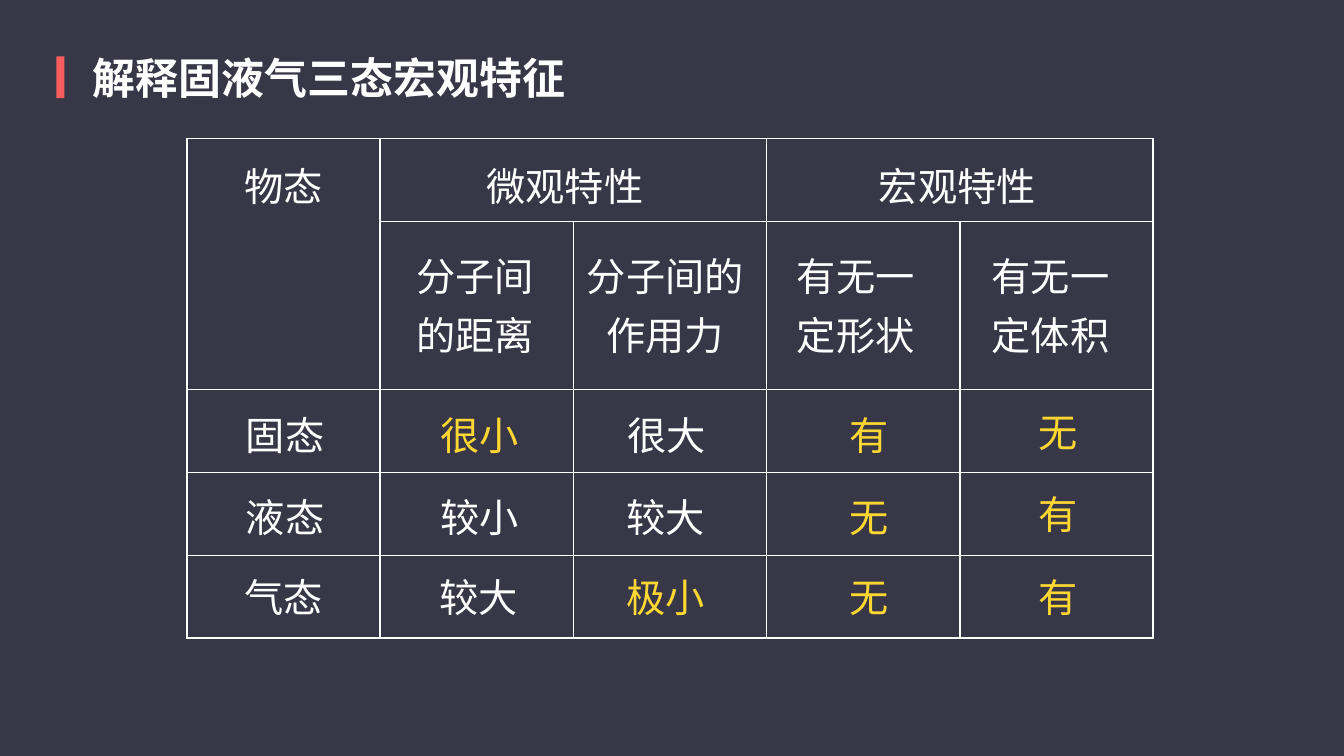
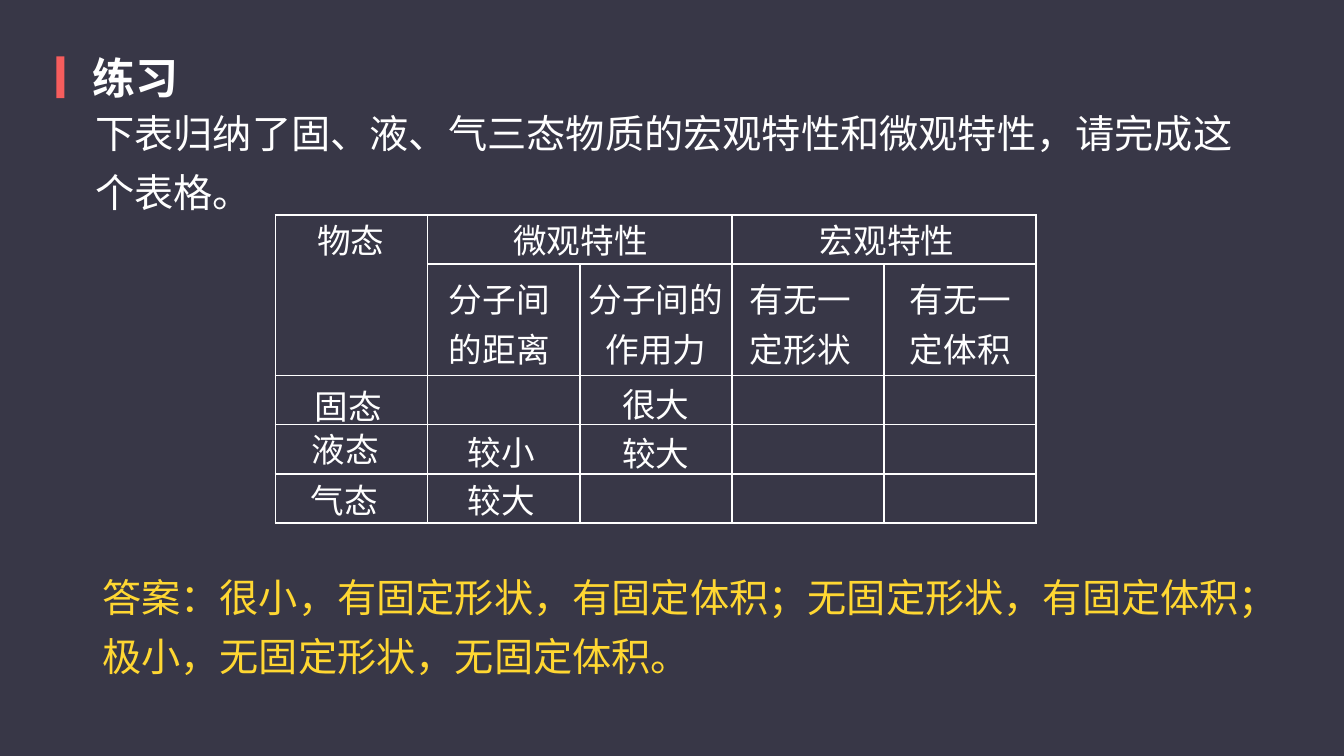
"""Two slides on the states of matter: a summary table and a fill-in exercise."""
from lxml import etree
from pptx import Presentation
from pptx.dml.color import RGBColor
from pptx.enum.shapes import MSO_SHAPE
from pptx.enum.text import MSO_ANCHOR, MSO_AUTO_SIZE, PP_ALIGN
from pptx.oxml.ns import qn
from pptx.util import Inches, Pt

RECTANGLE = MSO_SHAPE.RECTANGLE
TOP = MSO_ANCHOR.TOP
GROW = MSO_AUTO_SIZE.SHAPE_TO_FIT_TEXT
LEFT, CENTER = PP_ALIGN.LEFT, PP_ALIGN.CENTER

COLORS = {"night": "383747", "accent": "F65D5D", "white": "FFFFFF", "answer": "FFD732"}
FONT = "Noto Sans CJK SC"
TITLE_SIZE, BODY_SIZE, EXERCISE_SIZE = 23, 21, 18
TEXT_RIGHT = 9.99

GROUPS = ["物态", "微观特性", "宏观特性"]
PROPERTIES = ["分子间的距离", "分子间的作用力", "有无一定形状", "有无一定体积"]
STATES = [
    ("固态", "很小", "很大", "有", "无"),
    ("液态", "较小", "较大", "无", "有"),
    ("气态", "较大", "极小", "无", "有"),
]
ANSWERS = {(0, 1), (2, 2)} | {(row, column) for row in range(3) for column in (3, 4)}
ROWS, COLUMNS, PROPERTY_ROW = 5, 5, 1
MERGES = [((0, 0), (1, 0)), ((0, 1), (0, 2)), ((0, 3), (0, 4))]

SUMMARY = {
    "size": BODY_SIZE, "show_answers": True,
    "left": 1.39, "top": 1.03, "width": 7.19, "height": 3.72, "property_height": 1.25,
    "group_top": 1.12, "group_lefts": [1.82, 3.62, 6.54],
    "property_top": 1.79,
    "property_spans": [(3.1, 0.93), (4.34, 1.22), (5.93, 1.08), (7.38, 1)],
    "state_tops": [2.97, 3.58, 4.18], "state_lefts": [1.83, 3.28, 4.66, 6.32, 7.73],
    "nudges": {(2, 0): (-0.01, 0), (2, 1): (-0.01, 0), (0, 2): (0.01, 0),
               (0, 4): (0, -0.02), (1, 4): (0, -0.02)},
}
EXERCISE = {
    "size": EXERCISE_SIZE, "show_answers": False,
    "left": 2.05, "top": 1.6, "width": 5.66, "height": 2.29, "property_height": 0.83,
    "group_top": 1.56, "group_lefts": [2.36, 3.82, 6.1],
    "property_top": 2,
    "property_spans": [(3.34, 0.78), (4.27, 1.22), (5.58, 0.89), (6.77, 0.8)],
    "state_tops": [2.78, 3.14, 3.5], "state_lefts": [2.32, 3.48, 4.63, 5.87, 7],
    "nudges": {(0, 0): (0.02, 0.02), (1, 0): (0, -0.02), (2, 0): (-0.01, 0),
               (1, 2): (0, 0.01)},
}
SLIDES = [
    {"title": "解释固液气三态宏观特征", "table": SUMMARY, "passages": []},
    {"title": "练习", "table": EXERCISE, "passages": [
        ("下表归纳了固、液、气三态物质的宏观特性和微观特性，请完成这个表格。",
         0.71, 0.73, 8.51, "white"),
        ("答案：很小，有固定形状，有固定体积；无固定形状，有固定体积；极小，无固定形状，无固定体积。",
         0.76, 4.18, 8.66, "answer"),
    ]},
]


def rgb(name):
    return RGBColor.from_string(COLORS[name])


def write(box, text, size, color="white", bold=False, align=LEFT):
    frame = box.text_frame
    frame.word_wrap = True
    frame.auto_size = GROW
    frame.vertical_anchor = TOP
    frame.margin_left = frame.margin_right = frame.margin_top = frame.margin_bottom = 0
    paragraph = frame.paragraphs[0]
    paragraph.alignment = align
    paragraph.line_spacing = 1.25
    paragraph.space_before = Pt(0)
    run = paragraph.add_run()
    run.text = text
    run.font.size = Pt(size)
    run.font.bold = bold
    run.font.color.rgb = rgb(color)
    run.font.name = FONT
    etree.SubElement(run.font._element, qn("a:ea"), typeface=FONT)


def add_label(slide, text, left, top, size, width=None, color="white", align=LEFT):
    width = width or TEXT_RIGHT - left
    box = slide.shapes.add_textbox(Inches(left), Inches(top), Inches(width), 0)
    write(box, text, size, color, align=align)


def add_heading(slide, text):
    slide.background.fill.solid()
    slide.background.fill.fore_color.rgb = rgb("night")
    bar = slide.shapes.add_shape(
        RECTANGLE, Inches(0.42), Inches(0.42), Inches(0.06), Inches(0.31))
    bar.shadow.inherit = False
    bar.fill.solid()
    bar.fill.fore_color.rgb = rgb("accent")
    bar.line.fill.background()
    title = slide.shapes.title
    title.left, title.top = Inches(0.69), Inches(0.29)
    title.width, title.height = Inches(9.3), 0
    write(title, text, TITLE_SIZE, bold=True)


def style_cell(cell):
    cell.margin_left = cell.margin_right = cell.margin_top = cell.margin_bottom = 0
    properties = cell._tc.get_or_add_tcPr()
    for side in ("a:lnL", "a:lnR", "a:lnT", "a:lnB"):
        line = etree.SubElement(properties, qn(side), w=str(Pt(1)))
        fill = etree.SubElement(line, qn("a:solidFill"))
        etree.SubElement(fill, qn("a:srgbClr"), val=COLORS["white"])
    cell.fill.background()
    paragraph = cell.text_frame.paragraphs[0]._p
    etree.SubElement(paragraph, qn("a:endParaRPr"), sz="1000")


def add_grid(slide, spec):
    frame = slide.shapes.add_table(
        ROWS, COLUMNS, Inches(spec["left"]), Inches(spec["top"]),
        Inches(spec["width"]), Inches(spec["height"]))
    grid = frame.table
    grid.first_row = grid.horz_banding = False
    for column in grid.columns:
        column.width = Inches(spec["width"] / COLUMNS)
    plain_height = (spec["height"] - spec["property_height"]) / (ROWS - 1)
    for index, row in enumerate(grid.rows):
        row.height = Inches(
            spec["property_height"] if index == PROPERTY_ROW else plain_height)
        for cell in row.cells:
            style_cell(cell)
    for start, end in MERGES:
        grid.cell(*start).merge(grid.cell(*end))


def add_states_table(slide, spec):
    add_grid(slide, spec)
    size = spec["size"]
    for group, left in zip(GROUPS, spec["group_lefts"]):
        add_label(slide, group, left, spec["group_top"], size)
    for index, (name, (left, width)) in enumerate(zip(PROPERTIES, spec["property_spans"])):
        align = CENTER if index == 1 else LEFT
        add_label(slide, name, left, spec["property_top"], size, width, align=align)
    for row, (values, top) in enumerate(zip(STATES, spec["state_tops"])):
        for column, (value, left) in enumerate(zip(values, spec["state_lefts"])):
            is_answer = (row, column) in ANSWERS
            if is_answer and not spec["show_answers"]:
                continue
            across, down = spec["nudges"].get((row, column), (0, 0))
            add_label(slide, value, left + across, top + down, size,
                      color="answer" if is_answer else "white")


def main():
    deck = Presentation()
    deck.slide_width = Inches(10)
    deck.slide_height = deck.slide_width * 9 // 16
    for content in SLIDES:
        slide = deck.slides.add_slide(deck.slide_layouts[5])
        add_heading(slide, content["title"])
        for text, left, top, width, color in content["passages"]:
            add_label(slide, text, left, top, BODY_SIZE, width, color)
        add_states_table(slide, content["table"])
    deck.save("out.pptx")


if __name__ == "__main__":
    main()
